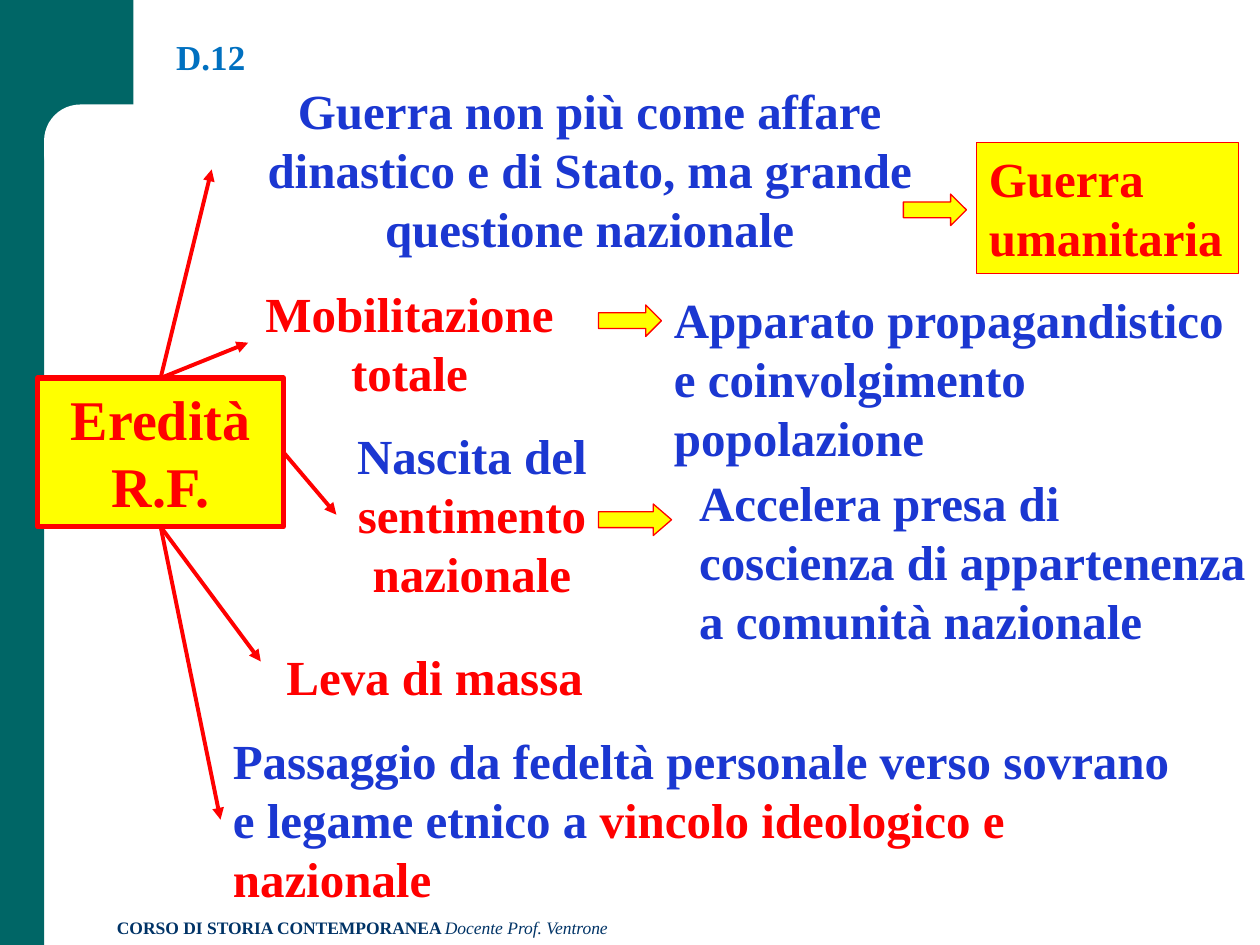
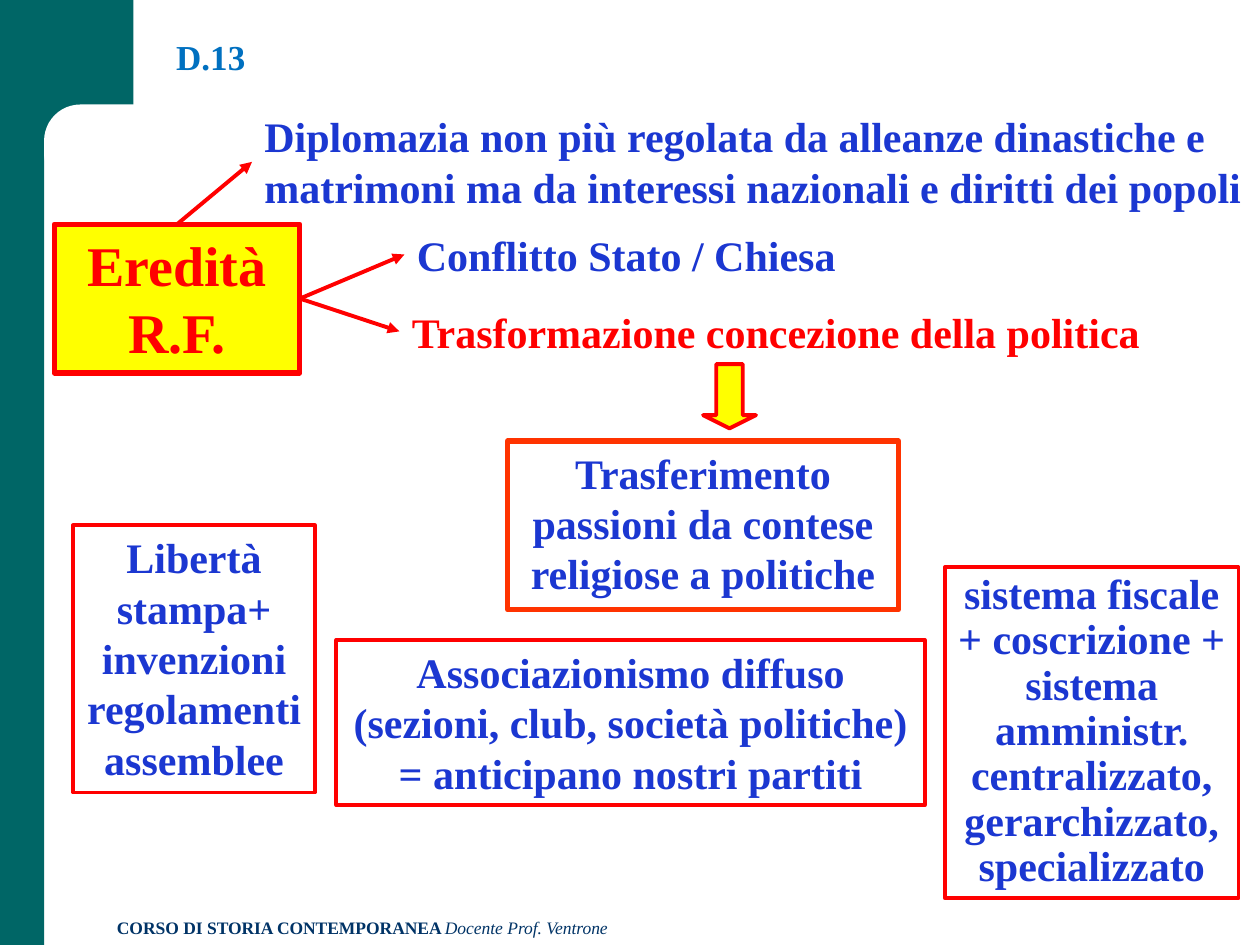
import dataclasses

import lxml.etree
import pptx
import pptx.dml.color
import pptx.enum.shapes
import pptx.enum.text
import pptx.oxml.ns
import pptx.util

Inches = pptx.util.Inches
Pt = pptx.util.Pt
Preset = pptx.enum.shapes.MSO_SHAPE
Align = pptx.enum.text.PP_ALIGN
Anchor = pptx.enum.text.MSO_ANCHOR
AutoSize = pptx.enum.text.MSO_AUTO_SIZE

TOP, LEFT, BOTTOM, RIGHT = range(4)


@dataclasses.dataclass(frozen=True)
class Theme:
    font: str = "Times New Roman"
    teal: str = "006666"
    white: str = "FFFFFF"
    navy: str = "003366"
    title: str = "0070C0"
    blue: str = "1B37D1"
    red: str = "FF0000"
    orange: str = "FF3300"
    yellow: str = "FFFF00"
    footer_size: int = 10
    title_size: int = 20
    small_size: int = 24
    body_size: int = 28
    root_size: int = 32
    thin: float = 0.75
    medium: float = 2.25
    thick: float = 3


THEME = Theme()


def rgb(value):
    return pptx.dml.color.RGBColor.from_string(value)


def write_text(shape, *runs, size=THEME.body_size, color=THEME.blue,
               align=Align.LEFT, anchor=Anchor.TOP, spacing=None, grow=True):
    frame = shape.text_frame
    frame.word_wrap = True
    frame.vertical_anchor = anchor
    frame.auto_size = AutoSize.SHAPE_TO_FIT_TEXT if grow else AutoSize.NONE
    paragraph = frame.paragraphs[0]
    paragraph.alignment = align
    if spacing:
        paragraph.line_spacing = spacing
    for item in runs:
        words, changes = (item, {}) if isinstance(item, str) else item
        run = paragraph.add_run()
        run.text = words
        run.font.name = THEME.font
        run.font.size = Pt(size)
        run.font.bold = changes.get("bold", True)
        run.font.italic = changes.get("italic", False)
        run.font.color.rgb = rgb(changes.get("color", color))


def add_label(slide, box, *runs, **text_format):
    label = slide.shapes.add_textbox(*map(Inches, box))
    write_text(label, *runs, **text_format)
    return label


def add_figure(slide, preset, box, fill=None, line=None, weight=THEME.medium, adjust=()):
    figure = slide.shapes.add_shape(preset, *map(Inches, box))
    figure.shadow.inherit = False
    for index, value in enumerate(adjust):
        figure.adjustments[index] = value
    if fill:
        figure.fill.solid()
        figure.fill.fore_color.rgb = rgb(fill)
    else:
        figure.fill.background()
    if line:
        figure.line.color.rgb = rgb(line)
        figure.line.width = Pt(weight)
    else:
        figure.line.fill.background()
    return figure


def add_frame(slide, box, words, fill=None, line=THEME.red, weight=THEME.medium, **text_format):
    frame = add_figure(slide, Preset.RECTANGLE, box, fill, line, weight)
    write_text(frame, words, **text_format)
    return frame


def add_root(slide, left, top):
    return add_frame(slide, (left, top, 1.95, 1.18), "Eredità R.F.", fill=THEME.yellow,
                     weight=THEME.thick, size=THEME.root_size, color=THEME.red,
                     align=Align.CENTER)


def add_branch(slide, root, side, topic=None, end=(0, 0)):
    branch = slide.shapes.add_connector(
        pptx.enum.shapes.MSO_CONNECTOR.STRAIGHT, 0, 0, *map(Inches, end))
    branch.begin_connect(root, side)
    if topic is not None:
        branch.end_connect(topic, LEFT)
    branch.line.color.rgb = rgb(THEME.red)
    branch.line.width = Pt(THEME.medium)
    qn = pptx.oxml.ns.qn
    lxml.etree.SubElement(branch.line._get_or_add_ln(), qn("a:tailEnd"), type="triangle")
    lxml.etree.SubElement(branch._element.spPr, qn("a:effectLst"))


def start_slide(deck, number):
    slide = deck.slides.add_slide(deck.slide_layouts[6])
    slide.background.fill.solid()
    slide.background.fill.fore_color.rgb = rgb(THEME.white)
    add_figure(slide, Preset.RECTANGLE, (0, 0, 0.35, 7.5), THEME.teal)
    add_figure(slide, Preset.RECTANGLE, (0, 0, 1.06, 1.17), THEME.teal)
    add_figure(slide, Preset.ROUNDED_RECTANGLE, (0.35, 0.83, 6.06, 0.67), THEME.white,
               adjust=(0.43,))
    add_label(slide, (0.83, 7.23, 6.17, 0.27), "CORSO DI STORIA CONTEMPORANEA ",
              ("Docente Prof. Ventrone", {"bold": False, "italic": True}),
              size=THEME.footer_size, color=THEME.navy)
    add_label(slide, (1.3, 0, 1.08, 0.67), number, size=THEME.title_size,
              color=THEME.title, anchor=Anchor.BOTTOM, spacing=0.9, grow=False)
    return slide


def build_war_legacy(deck):
    slide = start_slide(deck, "D.12")
    red = {"color": THEME.red}
    root = add_root(slide, 0.3, 3)
    national_war = add_label(
        slide, (1.68, 0.59, 6, 1.51),
        "Guerra non più come affare dinastico e di Stato, ma grande questione nazionale",
        align=Align.CENTER)
    add_frame(slide, (7.75, 1.13, 2.08, 1.04), "Guerra umanitaria", fill=THEME.yellow,
              weight=THEME.thin, color=THEME.red)
    add_label(slide, (5.45, 3.7, 4.55, 1.51),
              "Accelera presa di coscienza di appartenenza a comunità nazionale")
    mobilization = add_label(slide, (1.97, 2.2, 2.56, 1.04), "Mobilitazione totale",
                             color=THEME.red, align=Align.CENTER)
    national_feeling = add_label(slide, (2.67, 3.33, 2.15, 1.51), "Nascita del ",
                                 ("sentimento nazionale", red), align=Align.CENTER)
    ideological_bond = add_label(
        slide, (1.75, 5.75, 7.83, 1.51),
        "Passaggio da fedeltà personale verso sovrano e legame etnico a ",
        ("vincolo ideologico e nazionale", red))
    add_label(slide, (1.95, 5.08, 3, 0.57), "Leva di massa", color=THEME.red,
              align=Align.CENTER)
    add_label(slide, (5.25, 2.25, 4.75, 1.51),
              "Apparato propagandistico e coinvolgimento popolazione")

    for left, top, width in ((7.17, 1.54, 0.5), (4.75, 2.42, 0.5), (4.75, 4, 0.58)):
        add_figure(slide, Preset.RIGHT_ARROW, (left, top, width, 0.25), THEME.yellow,
                   THEME.red, THEME.thin, adjust=(0.5, width))

    for side, topic in ((TOP, national_war), (TOP, mobilization),
                        (RIGHT, national_feeling), (BOTTOM, ideological_bond)):
        add_branch(slide, root, side, topic)
    add_branch(slide, root, BOTTOM, end=(2.07, 5.25))


def build_politics_legacy(deck):
    slide = start_slide(deck, "D.13")
    small = {"size": THEME.small_size}
    centered = {"size": THEME.small_size, "align": Align.CENTER}
    root = add_root(slide, 0.43, 1.78)
    church_conflict = add_label(slide, (3.21, 1.77, 3.58, 0.5),
                                "Conflitto Stato / Chiesa", **small)
    politics = add_label(slide, (3.17, 2.38, 6.83, 0.5),
                         "Trasformazione concezione della politica",
                         color=THEME.red, **small)
    diplomacy = add_label(
        slide, (2, 0.83, 8, 0.91),
        "Diplomazia non più regolata da alleanze dinastiche e matrimoni "
        "ma da interessi nazionali e diritti dei popoli", **small)
    add_frame(slide, (4.03, 3.5, 3.1, 1.34),
              "Trasferimento passioni da contese religiose a politiche",
              line=THEME.orange, weight=THEME.thick, **centered)

    for side, topic in ((RIGHT, church_conflict), (TOP, diplomacy), (RIGHT, politics)):
        add_branch(slide, root, side, topic)

    add_frame(slide, (0.58, 4.17, 1.92, 2.12),
              "Libertà stampa+ invenzioni regolamenti assemblee",
              fill=THEME.white, **centered)
    add_frame(slide, (2.67, 5.08, 4.67, 1.31),
              "Associazionismo diffuso (sezioni, club, società politiche) "
              "= anticipano nostri partiti", **centered)
    add_figure(slide, Preset.DOWN_ARROW, (5.58, 2.89, 0.42, 0.51), THEME.yellow,
               THEME.red, adjust=(0.5, 0.25))
    add_frame(slide, (7.5, 4.5, 2.33, 2.63),
              "sistema fiscale + coscrizione + sistema amministr. centralizzato, "
              "gerarchizzato, specializzato", spacing=0.9, **centered)


def main():
    deck = pptx.Presentation()
    deck.slide_width = Inches(10)
    deck.slide_height = Inches(7.5)
    build_war_legacy(deck)
    build_politics_legacy(deck)
    deck.save("out.pptx")


if __name__ == "__main__":
    main()
